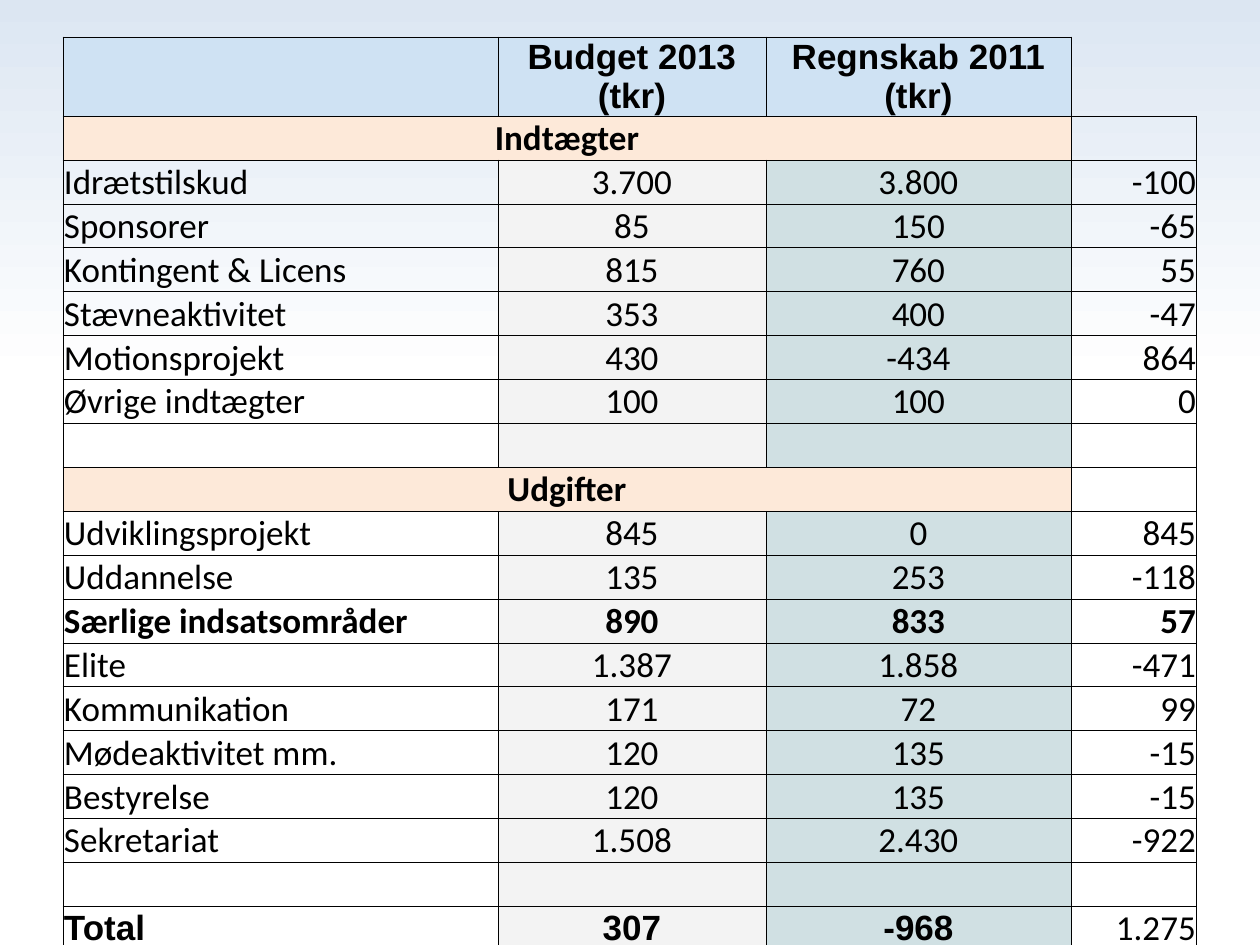
from lxml import etree
from pptx import Presentation
from pptx import util as u
from pptx.dml.color import RGBColor
from pptx.enum import text
from pptx.oxml.ns import qn

PX = u.Inches(1) // 126
COLORS = {
    "ink": "000000",
    "header": "CFE2F3",
    "section": "FDE9D9",
    "budget": "F3F3F3",
    "accounts": "D0E0E3",
    "sky": "DCE6F2",
    "white": "FFFFFF",
}
NO_STYLE = "{2D5ABB26-0587-4C30-8999-92F81FD0307C}"
ROWS = [
    ("", "Budget 2013 (tkr)", "Regnskab 2011 (tkr)", ""),
    ("Indtægter", "", "", ""),
    ("Idrætstilskud", "3.700", "3.800", "-100"),
    ("Sponsorer", "85", "150", "-65"),
    ("Kontingent & Licens", "815", "760", "55"),
    ("Stævneaktivitet", "353", "400", "-47"),
    ("Motionsprojekt", "430", "-434", "864"),
    ("Øvrige indtægter", "100", "100", "0"),
    ("", "", "", ""),
    ("Udgifter", "", "", ""),
    ("Udviklingsprojekt", "845", "0", "845"),
    ("Uddannelse", "135", "253", "-118"),
    ("Særlige indsatsområder", "890", "833", "57"),
    ("Elite", "1.387", "1.858", "-471"),
    ("Kommunikation", "171", "72", "99"),
    ("Mødeaktivitet mm.", "120", "135", "-15"),
    ("Bestyrelse", "120", "135", "-15"),
    ("Sekretariat", "1.508", "2.430", "-922"),
    ("", "", "", ""),
    ("Total", "307", "-968", "1.275"),
]
COLUMN_WIDTHS = [435, 268, 305, 126]
COLUMN_FILLS = [None, "budget", "accounts", None]
ALIGNMENTS = [text.PP_ALIGN.LEFT, text.PP_ALIGN.CENTER, text.PP_ALIGN.CENTER, text.PP_ALIGN.RIGHT]
HEADER, TOTAL, LAST_COLUMN = 0, len(ROWS) - 1, 3
SECTIONS = [1, 9]
BOLD_ROWS = [HEADER, *SECTIONS, 12, TOTAL]


def add_borders(cell, sides):
    properties = cell._tc.get_or_add_tcPr()
    for side in sides:
        line = etree.SubElement(properties, qn(f"a:ln{side}"), w=str(u.Pt(0.5)))
        fill = etree.SubElement(line, qn("a:solidFill"))
        etree.SubElement(fill, qn("a:srgbClr"), val=COLORS["ink"])


deck = Presentation()
deck.slide_width = 1260 * PX
deck.slide_height = 945 * PX
page = deck.slides.add_slide(deck.slide_layouts[6])

backdrop = page.background.fill
backdrop.gradient()
backdrop.gradient_angle = 90
for stop, position, name in zip(backdrop.gradient_stops, (0.6, 1), ("white", "sky")):
    stop.position = position
    stop.color.rgb = RGBColor.from_string(COLORS[name])

frame = page.shapes.add_table(len(ROWS), 4, 63 * PX, 37 * PX, 1134 * PX, 900 * PX)
table = frame.table
table.first_row = False
table.horz_banding = False
table._tbl.tblPr.find(qn("a:tableStyleId")).text = NO_STYLE
for column, width in zip(table.columns, COLUMN_WIDTHS):
    column.width = width * PX
for index, row in enumerate(table.rows):
    row.height = (66 if index == HEADER else 39) * PX
for index in SECTIONS:
    table.cell(index, 0).merge(table.cell(index, 2))

for i, values in enumerate(ROWS):
    for j, value in enumerate(values):
        cell = table.cell(i, j)
        corner = i == HEADER and j == LAST_COLUMN
        add_borders(cell, "LB" if corner else "LRTB")

        fill_name = COLUMN_FILLS[j]
        if j < LAST_COLUMN and i == HEADER:
            fill_name = "header"
        elif j < LAST_COLUMN and i in SECTIONS:
            fill_name = "section"
        if fill_name:
            cell.fill.solid()
            cell.fill.fore_color.rgb = RGBColor.from_string(COLORS[fill_name])
        else:
            cell.fill.background()

        cell.margin_left = cell.margin_right = cell.margin_top = PX
        cell.margin_bottom = 0
        cell.vertical_anchor = text.MSO_ANCHOR.MIDDLE
        cell.text = value
        para = cell.text_frame.paragraphs[0]
        para.alignment = text.PP_ALIGN.CENTER if i in SECTIONS else ALIGNMENTS[j]
        para.font.size = u.Pt(20)
        para.font.name = "Arial" if i in (HEADER, TOTAL) and j < LAST_COLUMN else "Calibri"
        para.font.bold = i in BOLD_ROWS and (i, j) != (TOTAL, LAST_COLUMN)
        para.font.color.rgb = RGBColor.from_string(COLORS["ink"])

deck.save("out.pptx")
